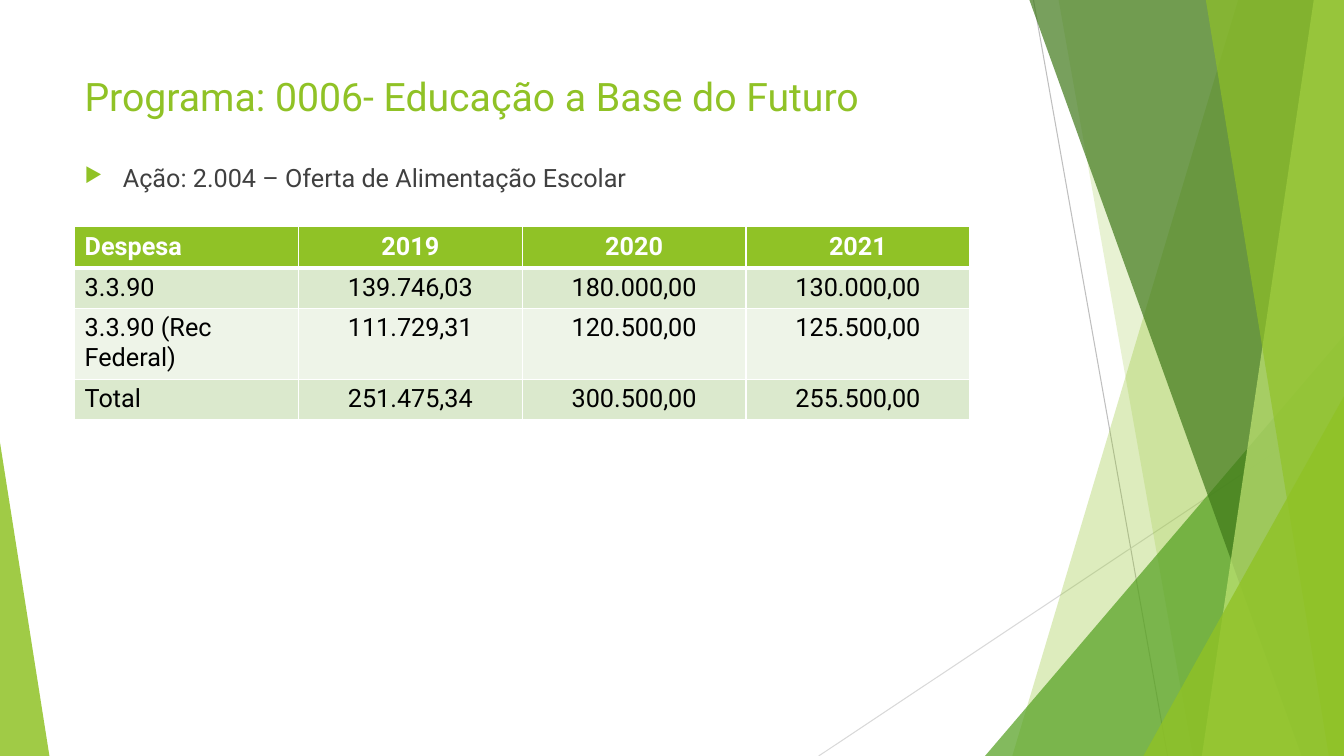
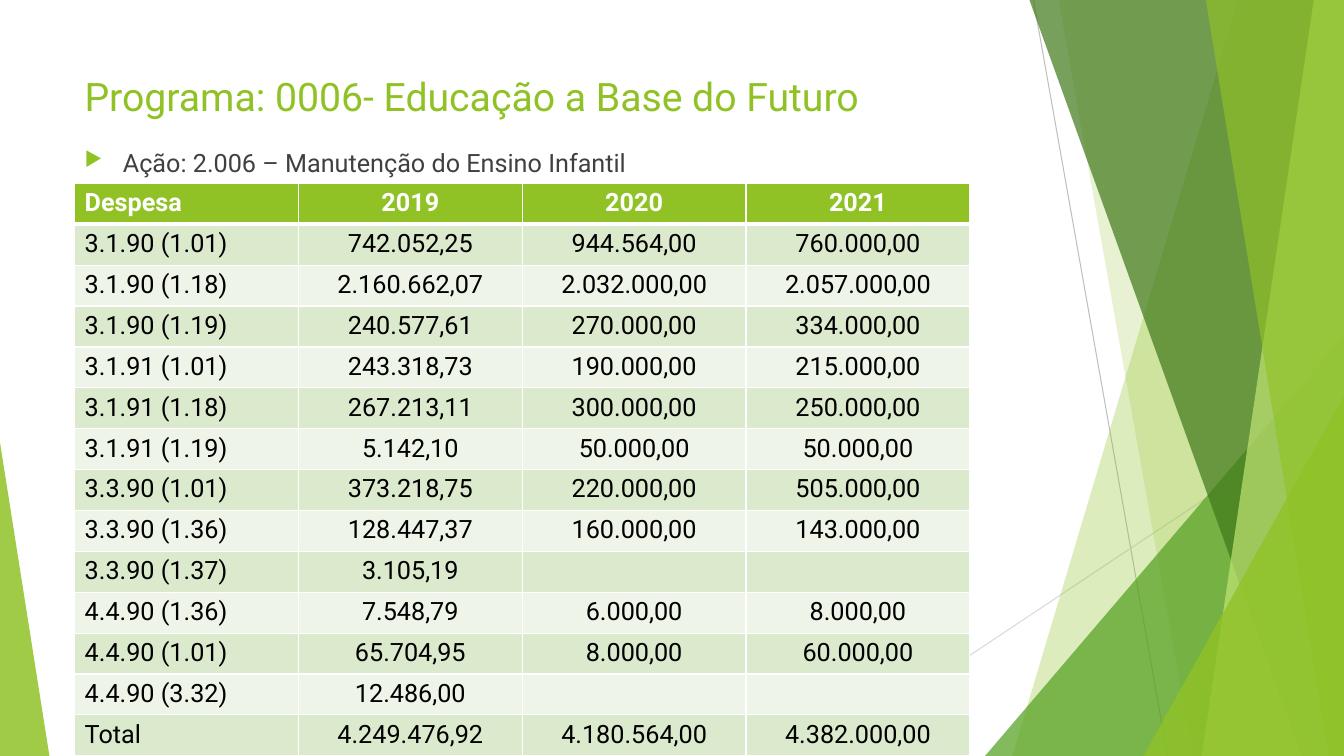
from lxml.etree import SubElement
from pptx import Presentation
from pptx.dml.color import RGBColor
from pptx.enum.shapes import MSO_CONNECTOR, MSO_SHAPE
from pptx.enum.text import MSO_ANCHOR, PP_ALIGN
from pptx.oxml.ns import qn
from pptx.util import Inches, Pt

COLORS = {
    "lime": "90C226", "green": "54A021", "forest": "3F7819", "pale": "C0E474",
    "text": "404040", "black": "000000", "white": "FFFFFF",
    "band1": "DBE9CD", "band2": "EEF4E8", "line1": "BFBFBF", "line2": "D9D9D9",
}
FORMATS = {
    "title": {"size": Pt(28), "bold": False, "color": "lime"},
    "action": {"size": Pt(18), "bold": False, "color": "text"},
    "header": {"size": Pt(18), "bold": True, "color": "white"},
    "cell": {"size": Pt(18), "bold": False, "color": "black"},
}
WIDTH, HEIGHT = 13.33, 7.5
LEFT = 0.74
COL_WIDTH = Inches(2.22)
ROW_HEIGHT = Inches(5.68) // 14

TITLE = "Programa: 0006- Educação a Base do Futuro"
HEADER = ["Despesa", "2019", "2020", "2021"]

# Background: lines (x1, y1, x2, y2, color)
LINES = [(10.25, 0, 11.58, HEIGHT, "line1"), (WIDTH, 4.03, 8.12, HEIGHT, "line2")]
# Bands reach the right edge: (top x, bottom x, color, opacity %)
# Triangles stand on the bottom edge: (left, top, width, apex, color, opacity %)
FACETS = [
    ("band", (12.28, 10.04), "lime", 30),
    ("band", (10.5, 11.83), "lime", 20),
    ("triangle", (9.77, 3.33, 3.56, 1), "green", 72),
    ("band", (10.21, 12.91), "forest", 70),
    ("band", (13.03, 11.92), "pale", 70),
    ("band", (11.96, 13.18), "lime", 65),
    ("triangle", (11.34, 3.93, 1.99, 1), "lime", 80),
    ("triangle", (0, 4.39, 0.49, 0), "lime", 85),
]

SLIDES = [
    {
        "action": "Ação: 2.004 – Oferta de Alimentação Escolar",
        "action_top": 1.56,
        "table_top": 2.25,
        "rows": [
            ["3.3.90", "139.746,03", "180.000,00", "130.000,00"],
            ["3.3.90 (Rec Federal)", "111.729,31", "120.500,00", "125.500,00"],
            ["Total", "251.475,34", "300.500,00", "255.500,00"],
        ],
    },
    {
        "action": "Ação: 2.006 – Manutenção do Ensino Infantil",
        "action_top": 1.41,
        "table_top": 1.82,
        "rows": [
            ["3.1.90 (1.01)", "742.052,25", "944.564,00", "760.000,00"],
            ["3.1.90 (1.18)", "2.160.662,07", "2.032.000,00", "2.057.000,00"],
            ["3.1.90 (1.19)", "240.577,61", "270.000,00", "334.000,00"],
            ["3.1.91 (1.01)", "243.318,73", "190.000,00", "215.000,00"],
            ["3.1.91 (1.18)", "267.213,11", "300.000,00", "250.000,00"],
            ["3.1.91 (1.19)", "5.142,10", "50.000,00", "50.000,00"],
            ["3.3.90 (1.01)", "373.218,75", "220.000,00", "505.000,00"],
            ["3.3.90 (1.36)", "128.447,37", "160.000,00", "143.000,00"],
            ["3.3.90 (1.37)", "3.105,19", "", ""],
            ["4.4.90 (1.36)", "7.548,79", "6.000,00", "8.000,00"],
            ["4.4.90 (1.01)", "65.704,95", "8.000,00", "60.000,00"],
            ["4.4.90 (3.32)", "12.486,00", "", ""],
            ["Total", "4.249.476,92", "4.180.564,00", "4.382.000,00"],
        ],
    },
]


def rgb(name):
    return RGBColor.from_string(COLORS[name])


def write(p, text, style):
    r = p.add_run()
    r.text = text
    r.font.name = "Roboto"
    for key, value in FORMATS[style].items():
        if key == "color":
            r.font.color.rgb = rgb(value)
        else:
            setattr(r.font, key, value)


prs = Presentation()
prs.slide_width, prs.slide_height = Inches(WIDTH), Inches(HEIGHT)

for data in SLIDES:
    s = prs.slides.add_slide(prs.slide_layouts[6])

    # Background lines
    for x1, y1, x2, y2, color in LINES:
        ln = s.shapes.add_connector(MSO_CONNECTOR.STRAIGHT, Inches(x1), Inches(y1),
                                    Inches(x2), Inches(y2))
        ln.line.color.rgb = rgb(color)
        ln.line.width = Pt(0.75)
        SubElement(ln._element.spPr, qn("a:effectLst"))

    # Translucent bands and triangles
    for kind, place, color, opacity in FACETS:
        if kind == "band":
            top_x, bottom_x = place
            fb = s.shapes.build_freeform(Inches(top_x), 0)
            fb.add_line_segments([(Inches(x), Inches(y)) for x, y in (
                (WIDTH, 0), (WIDTH, HEIGHT), (bottom_x, HEIGHT))])
            sp = fb.convert_to_shape()
        else:
            left, top, width, apex = place
            sp = s.shapes.add_shape(MSO_SHAPE.ISOSCELES_TRIANGLE, Inches(left), Inches(top),
                                    Inches(width), Inches(HEIGHT - top))
            sp.adjustments[0] = apex
        sp.shadow.inherit = False
        sp.line.fill.background()
        sp.fill.solid()
        sp.fill.fore_color.rgb = rgb(color)
        clr = sp._element.spPr.find(qn("a:solidFill")).find(qn("a:srgbClr"))
        SubElement(clr, qn("a:alpha"), val=str(opacity * 1000))

    # Title and action
    for text, style, top, height in ((TITLE, "title", 0.67, 0.74),
                                     (data["action"], "action", data["action_top"], 5.04)):
        sp = s.shapes.add_textbox(Inches(LEFT), Inches(top), Inches(9.4), Inches(height))
        tf = sp.text_frame
        tf.word_wrap = True
        tf.vertical_anchor = MSO_ANCHOR.TOP
        p = tf.paragraphs[0]
        write(p, text, style)

    # Bullet of the action
    p.space_before = Pt(10)
    pPr = p._p.get_or_add_pPr()
    pPr.set("marL", str(Inches(0.38)))
    pPr.set("indent", str(-Inches(0.38)))
    SubElement(SubElement(pPr, qn("a:buClr")), qn("a:srgbClr"), val=COLORS["lime"])
    SubElement(pPr, qn("a:buSzPct"), val="80000")
    SubElement(pPr, qn("a:buChar"), char="▶")

    # Expense table
    rows = [HEADER] + data["rows"]
    table = s.shapes.add_table(len(rows), len(HEADER), Inches(LEFT), Inches(data["table_top"]),
                               COL_WIDTH * len(HEADER), ROW_HEIGHT * len(rows)).table
    table.first_row = table.horz_banding = False
    for col in table.columns:
        col.width = COL_WIDTH
    for i, row in enumerate(rows):
        table.rows[i].height = ROW_HEIGHT
        fill = "lime" if i == 0 else "band1" if i % 2 else "band2"
        for j, text in enumerate(row):
            cell = table.cell(i, j)
            tcPr = cell._tc.get_or_add_tcPr()
            for side in ("lnL", "lnR", "lnT", "lnB"):
                thick = (i, side) in ((0, "lnB"), (1, "lnT"))
                ln = SubElement(tcPr, qn("a:" + side), w=str(Pt(3 if thick else 1)))
                SubElement(SubElement(ln, qn("a:solidFill")), qn("a:srgbClr"),
                           val=COLORS["white"])
            cell.fill.solid()
            cell.fill.fore_color.rgb = rgb(fill)
            p = cell.text_frame.paragraphs[0]
            if j:
                p.alignment = PP_ALIGN.CENTER
            if text:
                write(p, text, "cell" if i else "header")

prs.save("out.pptx")
